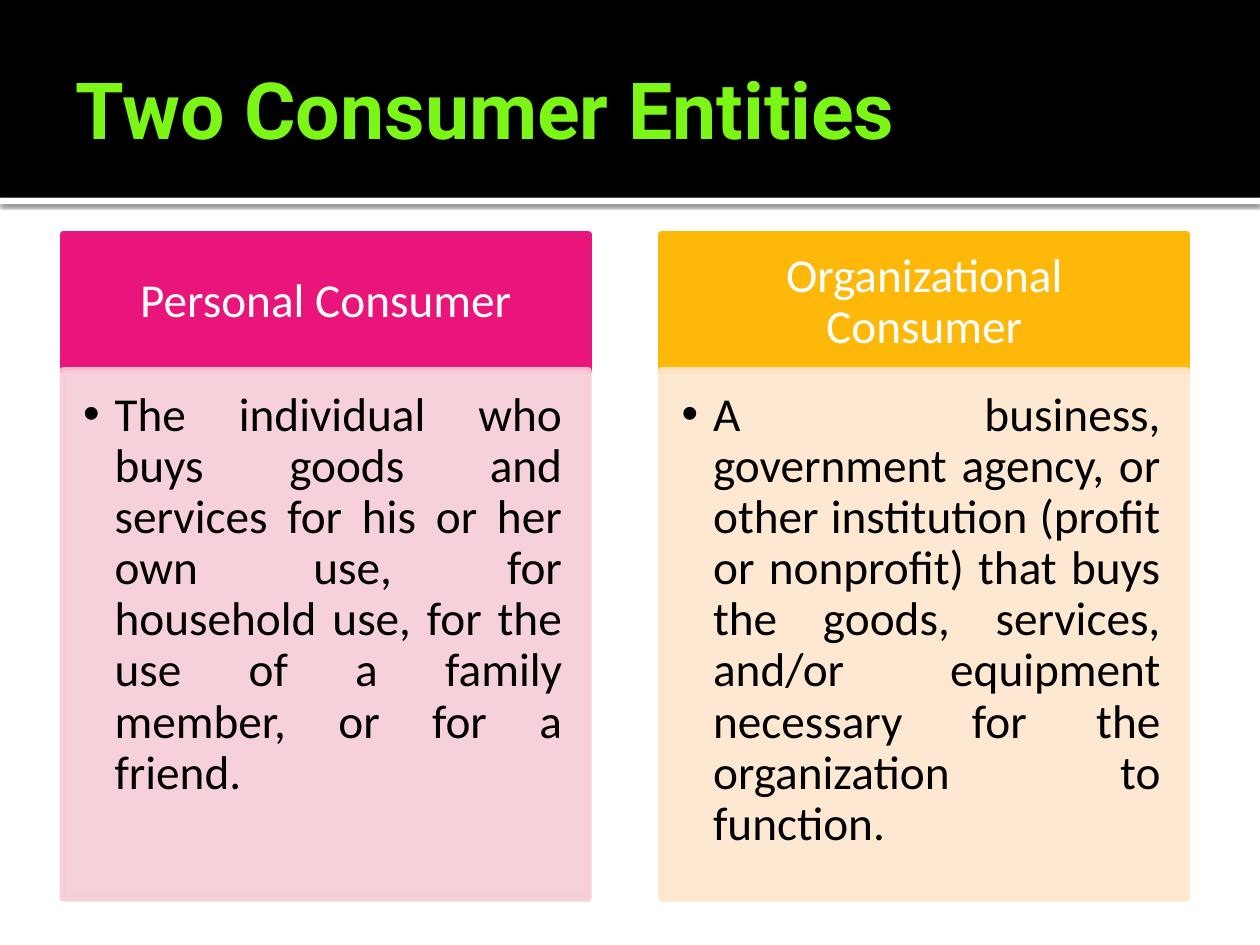
from lxml import etree
from pptx import Presentation
from pptx.dml.color import RGBColor
from pptx.enum.shapes import MSO_SHAPE
from pptx.enum.text import MSO_ANCHOR, PP_ALIGN
from pptx.oxml.ns import qn
from pptx.util import Inches, Pt

RECT = MSO_SHAPE.RECTANGLE
TOP, MID = MSO_ANCHOR.TOP, MSO_ANCHOR.MIDDLE
LEFT, CENTER, JUST = PP_ALIGN.LEFT, PP_ALIGN.CENTER, PP_ALIGN.JUSTIFY

# Content
TITLE = "Two Consumer Entities"
CARDS = [
    ("Personal Consumer", "pink", "rose",
     "The individual who buys goods and services for his or her own use, "
     "for household use, for the use of a family member, or for a friend."),
    ("Organizational Consumer", "gold", "cream",
     "A business, government agency, or other institution (profit or "
     "nonprofit) that buys the goods, services, and/or equipment necessary "
     "for the organization to function."),
]
HEX = {"black": "000000", "white": "FFFFFF", "lime": "7BF616",
       "pink": "EA157A", "rose": "F7CCD7", "gold": "FEB80A", "cream": "FFE6CC"}

# Layout in inches
WIDE, HIGH = 10, 7.5
BAND, STRIP = 1.57, 0.05
X0, Y0, CARD, STEP = 0.5, 1.86, 4.17, 4.75
HEAD, BODY = 1.08, 4.19

# Text formats: frame, paragraph and font
TITLE_FMT = dict(pad=(0.1, 0.05, 0.05, 0.05), anchor=MID,
                 para=dict(alignment=LEFT),
                 font=dict(name="Roboto", size=Pt(45), bold=True), ink="lime")
HEAD_FMT = dict(pad=(0.21, 0.12, 0.21, 0.12), anchor=MID,
                para=dict(alignment=CENTER, line_spacing=0.9),
                font=dict(name="Calibri", size=Pt(27)), ink="white")
BODY_FMT = dict(pad=(0.16, 0.16, 0.21, 0.24), anchor=TOP,
                para=dict(alignment=JUST, line_spacing=0.9, level=1),
                font=dict(name="Calibri", size=Pt(27)), ink="black")


def color(name):
    return RGBColor.from_string(HEX[name])


def put(item, values):
    for key, value in values.items():
        setattr(item, key, value)


def box(slide, at, fill, line=False, alpha=None):
    shape = slide.shapes.add_shape(RECT, *map(Inches, at))
    shape.shadow.inherit = False
    paints = [shape.fill]
    if line:
        shape.line.width = Pt(3.78)
        paints.append(shape.line.fill)
    else:
        shape.line.fill.background()
    for paint in paints:
        paint.solid()
        paint.fore_color.rgb = color(fill)
    if alpha:
        for tone in shape.element.spPr.iter(qn("a:srgbClr")):
            etree.SubElement(tone, qn("a:alpha"), val=str(alpha * 1000))
    return shape


def write(shape, text, fmt):
    frame = shape.text_frame
    sides = ("margin_left", "margin_top", "margin_right", "margin_bottom")
    put(frame, dict(zip(sides, map(Inches, fmt["pad"]))))
    put(frame, dict(word_wrap=True, vertical_anchor=fmt["anchor"]))
    para = frame.paragraphs[0]
    put(para, fmt["para"])
    run = para.add_run()
    run.text = text
    put(run.font, fmt["font"])
    run.font.color.rgb = color(fmt["ink"])
    return para


def bullet(para):
    props = para._p.get_or_add_pPr()
    props.set("marL", str(Inches(0.25)))
    props.set("indent", str(-Inches(0.25)))
    etree.SubElement(props, qn("a:buFont"), typeface="Arial")
    etree.SubElement(props, qn("a:buChar"), char="•")


def shade(shape):
    effects = shape.element.spPr.find(qn("a:effectLst"))
    outer = etree.SubElement(effects, qn("a:outerShdw"), blurRad=str(Pt(2.5)),
                             dist=str(Pt(0.8)), dir="5400000", rotWithShape="0")
    tone = etree.SubElement(outer, qn("a:srgbClr"), val=HEX["black"])
    etree.SubElement(tone, qn("a:alpha"), val="60000")


def main():
    deck = Presentation()
    deck.slide_width, deck.slide_height = Inches(WIDE), Inches(HIGH)
    slide = deck.slides.add_slide(deck.slide_layouts[5])
    title = slide.shapes.title

    # Header band and the white strip below it, behind the title
    strip = box(slide, (0, BAND, WIDE, STRIP), "white")
    shade(strip)
    band = box(slide, (0, 0, WIDE, BAND), "black")
    for part in (strip, band):
        title.element.addprevious(part.element)

    # Title
    put(title, dict(left=Inches(X0), top=Inches(0.17),
                    width=Inches(9), height=Inches(1.37)))
    write(title, TITLE, TITLE_FMT)

    # Cards: heading above description
    for i, (name, dark, pale, text) in enumerate(CARDS):
        x = X0 + i * STEP
        head = box(slide, (x, Y0, CARD, HEAD), dark, line=True)
        write(head, name, HEAD_FMT)
        body = box(slide, (x, Y0 + HEAD, CARD, BODY), pale, line=True, alpha=90)
        bullet(write(body, text, BODY_FMT))

    deck.save("out.pptx")


if __name__ == "__main__":
    main()
